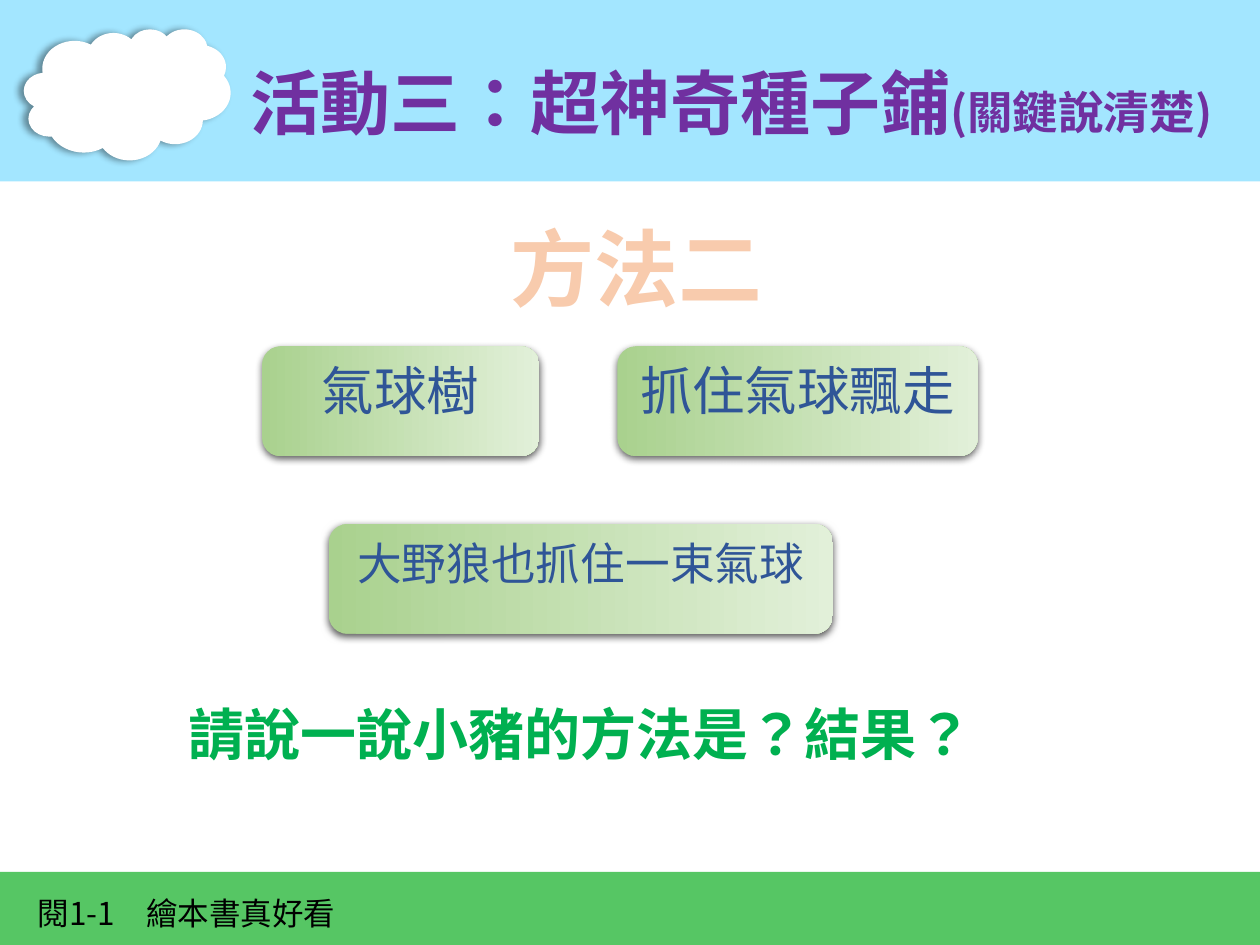
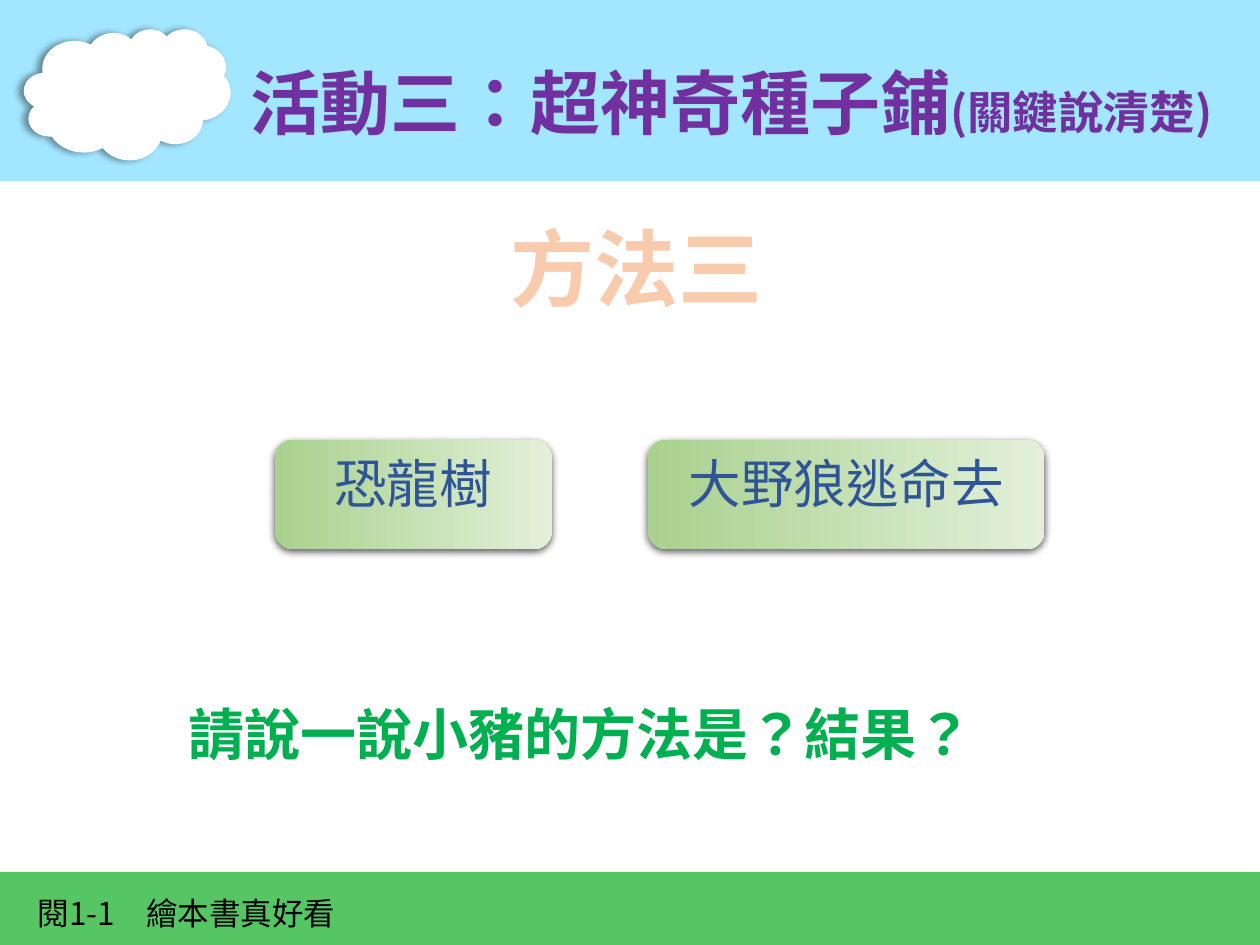
from lxml.etree import SubElement
from pptx import Presentation
from pptx.dml.color import RGBColor
from pptx.enum.shapes import MSO_SHAPE
from pptx.enum.text import MSO_ANCHOR, MSO_AUTO_SIZE, PP_ALIGN
from pptx.oxml.ns import qn
from pptx.util import Inches, Pt

FONT = "Noto Sans CJK SC"
HUES = {
    "sky": "A3E6FF", "cloud": "FFFFFF", "grass": "56C664", "ink": "000000",
    "title": "7030A0", "card": "2F5597", "leaf": "A9D18E", "pale": "E2F0D9",
    "ask": "00B050", "ask_edge": "C5E0B4", "head": "F8CBAD", "head_edge": "ED7D31",
}
CARD_H = 0.87


def hue(name):
    return RGBColor.from_string(HUES[name])


class Deck:
    def __init__(self):
        self.prs = Presentation()
        self.prs.slide_width, self.prs.slide_height = Inches(10), Inches(7.5)
        self.base = self.prs.slide_layouts.get_by_name("Title Only")
        self.slide = None

    def new(self):
        self.slide = self.prs.slides.add_slide(self.base)

    def run(self, para, text, size, color, bold=False, edge=None):
        run = para.add_run()
        run.text = text
        font = run.font
        font.name, font.size, font.bold = FONT, Pt(size), bold
        font.color.rgb = hue(color)
        props = run._r.get_or_add_rPr()
        props.set("lang", "zh-TW")
        SubElement(props, qn("a:ea"), typeface=FONT)
        if edge:
            name, width = edge
            line = SubElement(props, qn("a:ln"), w=str(Pt(width)))
            fill = SubElement(line, qn("a:solidFill"))
            SubElement(fill, qn("a:srgbClr"), val=HUES[name])
            props.insert(0, line)

    def shape(self, kind, box, color=None):
        item = self.slide.shapes.add_shape(kind, *map(Inches, box))
        item.shadow.inherit = False
        item.line.fill.background()
        if color:
            item.fill.solid()
            item.fill.fore_color.rgb = hue(color)
        return item

    def shade(self, item, alpha, blur, dist, angle):
        effects = item._element.spPr.find(qn("a:effectLst"))
        shadow = SubElement(effects, qn("a:outerShdw"), blurRad=str(Pt(blur)),
                            dist=str(Pt(dist)), dir=str(angle * 60000),
                            algn="ctr", rotWithShape="0")
        tint = SubElement(shadow, qn("a:srgbClr"), val=HUES["ink"])
        SubElement(tint, qn("a:alpha"), val=str(alpha * 1000))

    def label(self, box, text, size, color, **style):
        item = self.slide.shapes.add_textbox(*map(Inches, box))
        self.run(item.text_frame.paragraphs[0], text, size, color, **style)
        return item

    def banner(self, box, text, size, color, edge):
        item = self.label(box, text, size, color, bold=True, edge=edge)
        frame = item.text_frame
        frame.word_wrap = False
        frame.auto_size = MSO_AUTO_SIZE.SHAPE_TO_FIT_TEXT
        frame.paragraphs[0].alignment = PP_ALIGN.CENTER

    def card(self, left, top, width, text, size=30):
        item = self.shape(MSO_SHAPE.ROUNDED_RECTANGLE, (left, top, width, CARD_H))
        item.fill.gradient()
        item.fill.gradient_angle = 0
        for stop, name in zip(item.fill.gradient_stops, ("leaf", "pale")):
            stop.color.rgb = hue(name)
        self.shade(item, 63, 4.5, 1.5, 90)
        frame = item.text_frame
        frame.word_wrap = True
        frame.vertical_anchor = MSO_ANCHOR.TOP
        para = frame.paragraphs[0]
        para.alignment = PP_ALIGN.CENTER
        self.run(para, text, size, "card")

    def title(self, parts):
        item = self.slide.shapes.title
        item.left, item.top = Inches(1.89), Inches(0.41)
        item.width, item.height = Inches(7.92), Inches(0.88)
        frame = item.text_frame
        frame.auto_size = MSO_AUTO_SIZE.NONE
        frame.vertical_anchor = MSO_ANCHOR.MIDDLE
        para = frame.paragraphs[0]
        para.alignment, para.line_spacing = PP_ALIGN.LEFT, 0.9
        for text, size in parts:
            self.run(para, text, size, "title", bold=True)

    def frame(self):
        """Draw the shared bands once and move them to the layout."""
        sky = self.shape(MSO_SHAPE.RECTANGLE, (0, -0.03, 10, 1.47), "sky")
        cloud = self.shape(MSO_SHAPE.CLOUD, (0.19, 0.23, 1.64, 1.04), "cloud")
        self.shade(cloud, 40, 4, 3, 180)
        grass = self.shape(MSO_SHAPE.RECTANGLE, (0, 6.92, 10, 0.58), "grass")
        foot = self.label((0.2, 7.05, 5.49, 0.4), "閱1-1　繪本書真好看", 18, "ink")
        foot.text_frame.word_wrap = True
        tree = self.base.shapes._spTree
        for place, item in enumerate((sky, cloud, grass, foot), 2):
            tree.insert(place, item._element)


# Heading and cards (left, top, width, text, size) of each slide
PAGES = [
    ("方法二", [(2.08, 2.75, 2.2, "氣球樹"),
             (4.9, 2.75, 2.86, "抓住氣球飄走"),
             (2.61, 4.16, 4, "大野狼也抓住一束氣球", 25.5)]),
    ("方法三", [(2.18, 3.49, 2.2, "恐龍樹"),
             (5.14, 3.49, 3.15, "大野狼逃命去")]),
]


def main():
    deck = Deck()
    for page, (head, cards) in enumerate(PAGES):
        deck.new()
        if page == 0:
            deck.frame()
        deck.title([("活動三：超神奇種子鋪", 40), ("(關鍵說清楚)", 26)])
        deck.banner((3.94, 1.67, 2.22, 0.91), head, 48, "head", ("head_edge", 1.75))
        for card in cards:
            deck.card(*card)
        deck.banner((1.37, 5.5, 6.48, 0.64), "請說一說小豬的方法是？結果？",
                    32, "ask", ("ask_edge", 1))
    deck.prs.save("out.pptx")


if __name__ == "__main__":
    main()
